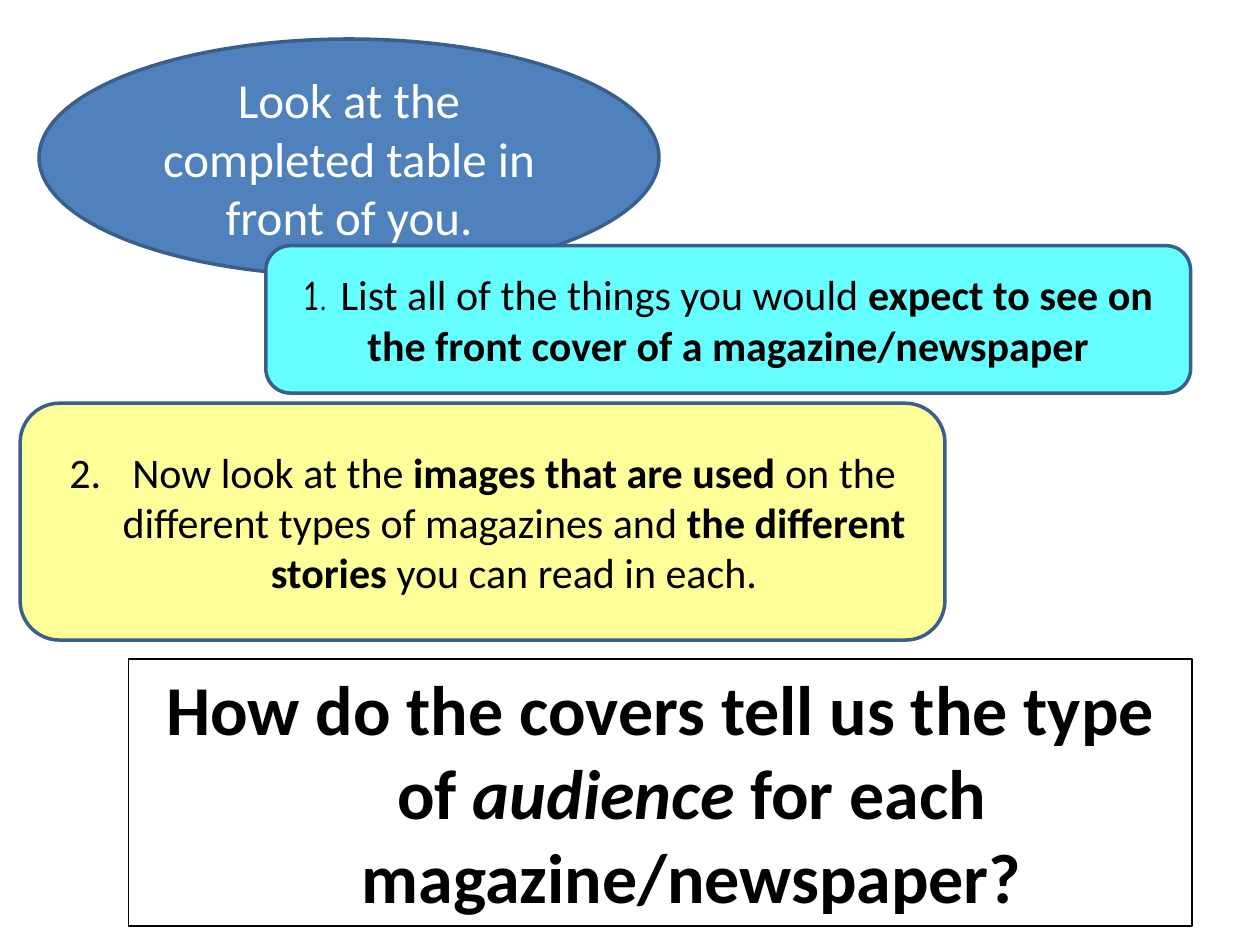
from lxml.etree import SubElement
from pptx import Presentation
from pptx.dml.color import RGBColor
from pptx.enum.shapes import MSO_SHAPE as SHAPE
from pptx.enum.text import MSO_ANCHOR as ANCHOR, MSO_AUTO_SIZE as AUTO_SIZE, PP_ALIGN as ALIGN
from pptx.oxml.ns import qn
from pptx.util import Inches, Pt

COLORS = {
    "blue": "4F81BD",
    "outline": "3A5F8C",
    "cyan": "66FFFF",
    "yellow": "FFFF99",
    "white": "FFFFFF",
    "black": "000000",
}


def rgb(name):
    return RGBColor.from_string(COLORS[name])


def add_box(s, kind, left, top, width, height, fill, line="outline", weight=2,
            anchor=ANCHOR.MIDDLE):
    """Add a filled, outlined shape and return its text frame."""
    sp = s.shapes.add_shape(kind, Inches(left), Inches(top), Inches(width), Inches(height))
    sp.shadow.inherit = False
    sp.fill.solid()
    sp.fill.fore_color.rgb = rgb(fill)
    sp.line.color.rgb = rgb(line)
    sp.line.width = Pt(weight)
    tf = sp.text_frame
    tf.word_wrap = True
    tf.vertical_anchor = anchor
    tf.paragraphs[0].alignment = ALIGN.CENTER
    return tf


def add_run(p, text, size=24, color="black", font="Calibri", bold=False, italic=False):
    r = p.add_run()
    r.text = text
    r.font.size = Pt(size)
    r.font.name = font
    r.font.bold = bold
    r.font.italic = italic
    r.font.color.rgb = rgb(color)


def set_hanging(p, indent, number=None):
    """Hang the first line, with an automatic number if one is given."""
    pPr = p._p.get_or_add_pPr()
    pPr.set("marL", str(Inches(indent)))
    pPr.set("indent", str(-Inches(indent)))
    if number:
        SubElement(pPr, qn("a:buFont"), typeface="+mj-lt")
        SubElement(pPr, qn("a:buAutoNum"), type="arabicPeriod", startAt=str(number))


def main():
    prs = Presentation()
    prs.slide_width, prs.slide_height = Inches(10), Inches(7.5)
    s = prs.slides.add_slide(prs.slide_layouts[6])

    # Opening instruction
    tf = add_box(s, SHAPE.OVAL, 0.31, 0.31, 4.92, 1.88, "blue")
    add_run(tf.paragraphs[0], "Look at the completed table in front of you.",
            size=28, color="white")

    # Task 1
    tf = add_box(s, SHAPE.ROUNDED_RECTANGLE, 2.11, 1.95, 7.34, 1.17, "cyan")
    p = tf.paragraphs[0]
    add_run(p, "1. ", font="Comic Neue")
    add_run(p, "List all of the things you would ")
    add_run(p, "expect to see on the front cover of a magazine/newspaper", bold=True)

    # Task 2
    tf = add_box(s, SHAPE.ROUNDED_RECTANGLE, 0.16, 3.2, 7.34, 1.88, "yellow")
    p = tf.paragraphs[0]
    set_hanging(p, 0.5, number=2)
    add_run(p, "Now look at the ")
    add_run(p, "images that are used ", bold=True)
    add_run(p, "on the different types of magazines and ")
    add_run(p, "the different stories ", bold=True)
    add_run(p, "you can read in each.")

    # Key question
    tf = add_box(s, SHAPE.RECTANGLE, 1.02, 5.23, 8.44, 2.12, "white",
                 line="black", weight=0.75, anchor=ANCHOR.TOP)
    tf.auto_size = AUTO_SIZE.SHAPE_TO_FIT_TEXT
    p = tf.paragraphs[0]
    set_hanging(p, 0.5)
    add_run(p, "How do the covers tell us the type of ", size=40, bold=True)
    add_run(p, "audience", size=40, bold=True, italic=True)
    add_run(p, " for each magazine/newspaper?", size=40, bold=True)

    prs.save("out.pptx")


if __name__ == "__main__":
    main()
